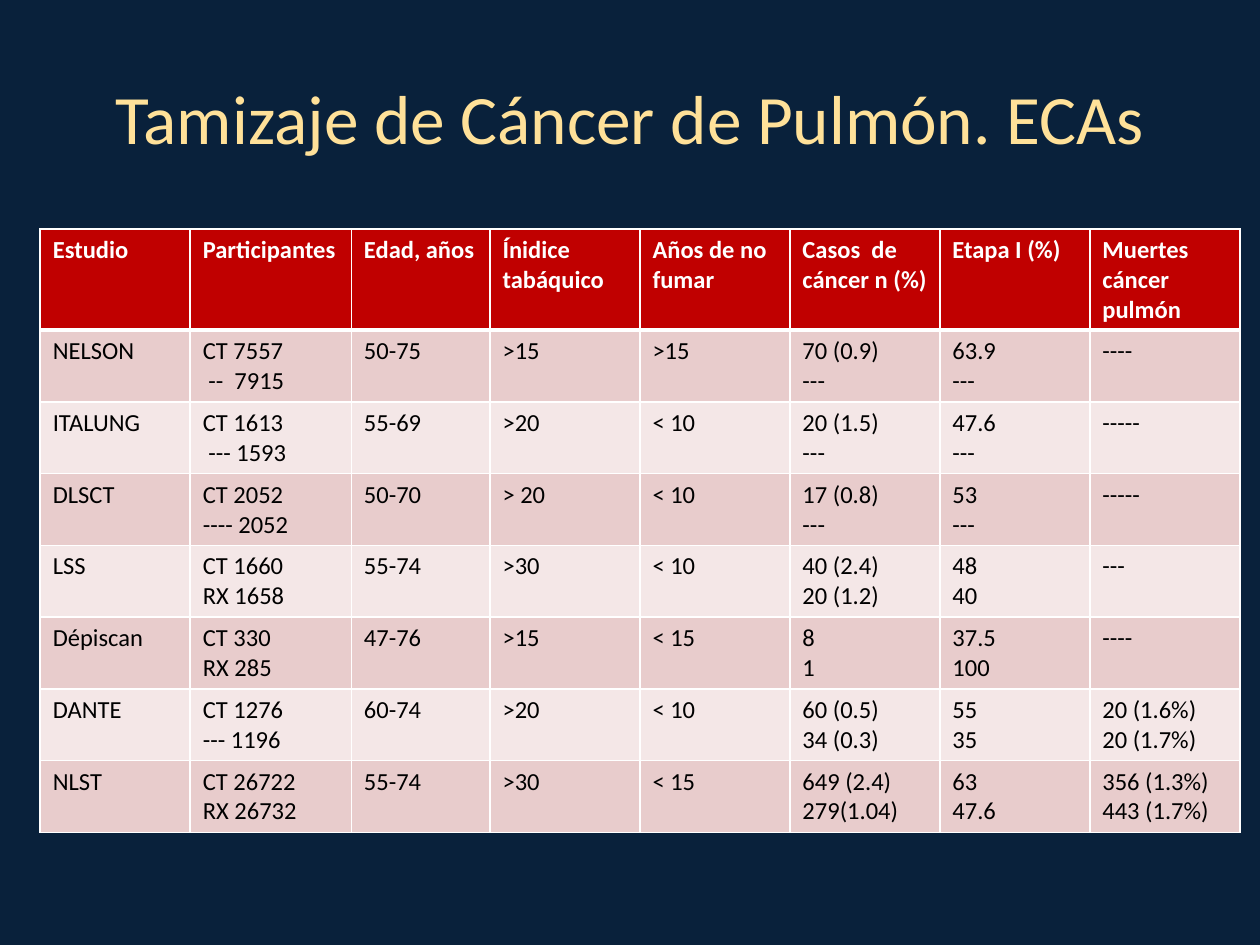
import pptx
import pptx.dml.color
import pptx.enum.text
import pptx.oxml
import pptx.oxml.ns
import pptx.util
from pptx.util import Pt

RGBColor = pptx.dml.color.RGBColor
NAVY = RGBColor(0x09, 0x21, 0x3B)
CREAM = RGBColor(0xFF, 0xE1, 0x99)
RED = RGBColor(0xC0, 0x00, 0x00)
ROSE = RGBColor(0xE8, 0xCC, 0xCC)
PALE_ROSE = RGBColor(0xF4, 0xE7, 0xE7)
WHITE = RGBColor(0xFF, 0xFF, 0xFF)
BLACK = RGBColor(0x00, 0x00, 0x00)

FONT = "Calibri"
HEADER_HEIGHT, ROW_HEIGHT = 57, 41
COLUMN_WIDTHS = [85.7, 92.1, 79.2] + [85.7] * 5

HEADERS = ["Estudio", "Participantes", "Edad, años", "Ínidice tabáquico",
           "Años de no fumar", "Casos  de cáncer n (%)", "Etapa I (%)",
           "Muertes  cáncer pulmón"]
# A line break starts the second arm of a trial
STUDIES = [
    ["NELSON", "CT 7557\n --  7915", "50-75", ">15", ">15",
     "70 (0.9)\n---", "63.9\n---", "----"],
    ["ITALUNG", "CT 1613\n --- 1593", "55-69", ">20", "< 10",
     "20 (1.5)\n---", "47.6\n---", "-----"],
    ["DLSCT", "CT 2052\n---- 2052", "50-70", "> 20", "< 10",
     "17 (0.8)\n---", "53\n---", "-----"],
    ["LSS", "CT 1660\nRX 1658", "55-74", ">30", "< 10",
     "40 (2.4)\n20 (1.2)", "48\n40", "---"],
    ["Dépiscan", "CT 330\nRX 285", "47-76", ">15", "< 15",
     "8\n1", "37.5\n100", "----"],
    ["DANTE", "CT 1276\n--- 1196", "60-74", ">20", "< 10",
     "60 (0.5)\n34 (0.3)", "55\n35", "20 (1.6%)\n20 (1.7%)"],
    ["NLST", "CT 26722\nRX 26732", "55-74", ">30", "< 15",
     "649 (2.4)\n279(1.04)", "63\n47.6", "356 (1.3%)\n443 (1.7%)"],
]


def write_text(frame, text, *, size, color, bold=False, align=None):
    """Write each line of text as a formatted paragraph."""
    for index, line in enumerate(text.split("\n")):
        para = frame.paragraphs[0] if index == 0 else frame.add_paragraph()
        para.alignment = align
        span = para.add_run()
        span.text = line
        span.font.name = FONT
        span.font.size = Pt(size)
        span.font.bold = bold
        span.font.color.rgb = color


def set_borders(cell, *, top=1, bottom=1):
    """Draw white lines on the four sides of a cell."""
    properties = cell._tc.get_or_add_tcPr()
    for side, width in (("L", 1), ("R", 1), ("T", top), ("B", bottom)):
        properties.append(pptx.oxml.parse_xml(
            f'<a:ln{side} {pptx.oxml.ns.nsdecls("a")} w="{Pt(width)}">'
            f'<a:solidFill><a:srgbClr val="{WHITE}"/></a:solidFill>'
            f'</a:ln{side}>'))


def add_title(page, text):
    box = page.shapes.add_textbox(Pt(36), Pt(21.6), Pt(648), Pt(90))
    frame = box.text_frame
    frame.word_wrap = True
    frame.vertical_anchor = pptx.enum.text.MSO_ANCHOR.MIDDLE
    write_text(frame, text, size=39.6, color=CREAM,
               align=pptx.enum.text.PP_ALIGN.CENTER)


def add_study_table(page, rows):
    height = HEADER_HEIGHT + ROW_HEIGHT * (len(rows) - 1)
    table = page.shapes.add_table(
        len(rows), len(COLUMN_WIDTHS), Pt(23), Pt(131),
        Pt(sum(COLUMN_WIDTHS)), Pt(height)).table
    for column, width in zip(table.columns, COLUMN_WIDTHS):
        column.width = Pt(width)

    for row_index, texts in enumerate(rows):
        is_header = row_index == 0
        table.rows[row_index].height = Pt(HEADER_HEIGHT if is_header else ROW_HEIGHT)
        band = RED if is_header else ROSE if row_index % 2 else PALE_ROSE
        for column_index, text in enumerate(texts):
            cell = table.cell(row_index, column_index)
            # The rule below the header is thicker
            set_borders(cell, top=3 if row_index == 1 else 1,
                        bottom=3 if is_header else 1)
            cell.fill.solid()
            cell.fill.fore_color.rgb = band
            write_text(cell.text_frame, text, size=14, bold=is_header,
                       color=WHITE if is_header else BLACK)


def main():
    deck = pptx.Presentation()
    deck.slide_width, deck.slide_height = Pt(720), Pt(540)
    page = deck.slides.add_slide(deck.slide_layouts[6])

    # Background
    page.background.fill.solid()
    page.background.fill.fore_color.rgb = NAVY

    # Title and table of trials
    add_title(page, "Tamizaje de Cáncer de Pulmón. ECAs")
    add_study_table(page, [HEADERS] + STUDIES)

    deck.save("out.pptx")


if __name__ == "__main__":
    main()
